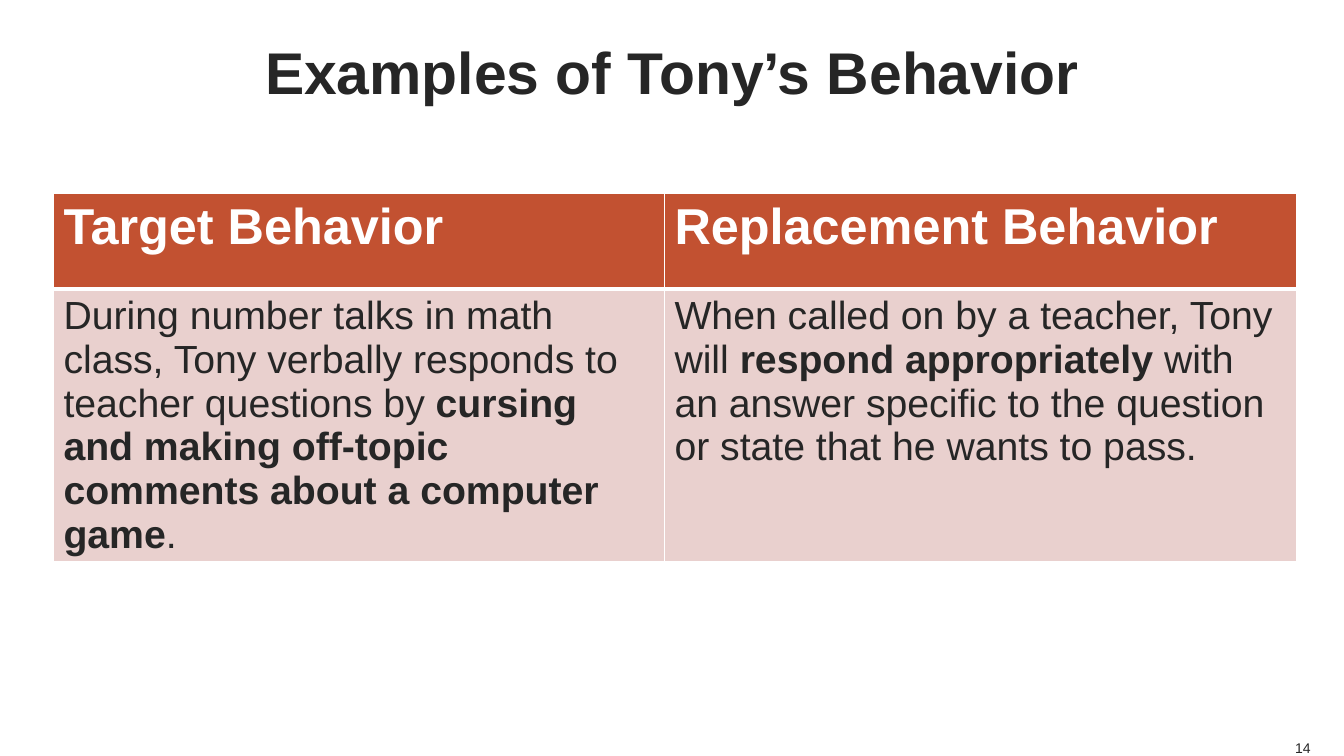
import lxml.etree
import pptx
import pptx.dml.color
import pptx.enum.text
import pptx.oxml.ns
import pptx.util

PX = 9144  # one hundredth of an inch
FONT = "Arial"
INK, WHITE, RUST, BLUSH = "262626", "FFFFFF", "C25131", "E9D0CE"

TITLE_FORMAT = {"name": FONT, "size": pptx.util.Pt(42), "bold": True}
HEADER_FORMAT = {"name": FONT, "size": pptx.util.Pt(36), "bold": True}
BODY_FORMAT = {"name": FONT, "size": pptx.util.Pt(28), "bold": False}
NUMBER_FORMAT = {"name": FONT, "size": pptx.util.Pt(10), "bold": False}

COLUMN_WIDTHS = [606, 627]
ROW_HEIGHTS = [95, 199]
# Each cell is a list of (text, bold) pieces
BEHAVIORS = [
    [
        [("Target Behavior", True)],
        [("Replacement Behavior", True)],
    ],
    [
        [
            ("During number talks in math class, Tony verbally responds to "
             "teacher questions by ", False),
            ("cursing and making off-topic comments about a computer game", True),
            (".", False),
        ],
        [
            ("When called on by a teacher, Tony will ", False),
            ("respond appropriately ", True),
            ("with an answer specific to the question or state that he "
             "wants to pass.", False),
        ],
    ],
]


def px(length):
    return pptx.util.Emu(length * PX)


def color(hex_value):
    return pptx.dml.color.RGBColor.from_string(hex_value)


def set_format(target, values):
    for name, value in values.items():
        setattr(target, name, value)


def place(shape, box):
    set_format(shape, dict(zip(("left", "top", "width", "height"), map(px, box))))


def add_text(paragraph, text, font_format, hex_value):
    run = paragraph.add_run()
    run.text = text
    set_format(run.font, font_format)
    run.font.color.rgb = color(hex_value)


def format_frame(frame, anchor, wrap):
    set_format(frame, {
        "margin_left": 0, "margin_top": 0, "margin_right": 0, "margin_bottom": 0,
        "vertical_anchor": anchor, "word_wrap": wrap,
        "auto_size": pptx.enum.text.MSO_AUTO_SIZE.NONE,
    })


def set_borders(cell, bottom_points):
    properties = cell._tc.get_or_add_tcPr()
    widths = {"lnL": 1, "lnR": 1, "lnT": 1, "lnB": bottom_points}
    for position, (side, points) in enumerate(widths.items()):
        line = lxml.etree.Element(pptx.oxml.ns.qn("a:" + side), w=str(pptx.util.Pt(points)))
        fill = lxml.etree.SubElement(line, pptx.oxml.ns.qn("a:solidFill"))
        lxml.etree.SubElement(fill, pptx.oxml.ns.qn("a:srgbClr"), val=WHITE)
        properties.insert(position, line)


def add_title(slide, box):
    title = slide.shapes.title
    place(title, box)
    format_frame(title.text_frame, pptx.enum.text.MSO_ANCHOR.MIDDLE, True)
    paragraph = title.text_frame.paragraphs[0]
    paragraph.alignment = pptx.enum.text.PP_ALIGN.CENTER
    add_text(paragraph, "Examples of Tony’s Behavior", TITLE_FORMAT, INK)


def add_slide_number(slide, box):
    number = slide.shapes.add_textbox(*map(px, box))
    format_frame(number.text_frame, pptx.enum.text.MSO_ANCHOR.BOTTOM, False)
    paragraph = number.text_frame.paragraphs[0]
    paragraph.alignment = pptx.enum.text.PP_ALIGN.RIGHT
    paragraph.space_after = pptx.util.Pt(6)
    add_text(paragraph, "14", NUMBER_FORMAT, INK)


def add_behavior_table(slide, box):
    shape = slide.shapes.add_table(len(ROW_HEIGHTS), len(COLUMN_WIDTHS), *map(px, box))
    table = shape.table
    for column, width in zip(table.columns, COLUMN_WIDTHS):
        column.width = px(width)
    for row, height in zip(table.rows, ROW_HEIGHTS):
        row.height = px(height)
    place(shape, box)

    # Header row first, then the examples
    styles = [(HEADER_FORMAT, WHITE, RUST, 3), (BODY_FORMAT, INK, BLUSH, 1)]
    for row, contents, style in zip(table.rows, BEHAVIORS, styles):
        font_format, text_color, fill_color, bottom_points = style
        for cell, pieces in zip(row.cells, contents):
            cell.fill.solid()
            cell.fill.fore_color.rgb = color(fill_color)
            set_borders(cell, bottom_points)
            set_format(cell, {"margin_left": px(10), "margin_right": px(10),
                              "margin_top": px(5), "margin_bottom": px(5)})
            for text, bold in pieces:
                add_text(cell.text_frame.paragraphs[0], text,
                         {**font_format, "bold": bold}, text_color)


def main():
    presentation = pptx.Presentation()
    presentation.slide_width = px(1333)
    presentation.slide_height = px(750)
    slide = presentation.slides.add_slide(presentation.slide_layouts.get_by_name("Title Only"))
    slide.background.fill.solid()
    slide.background.fill.fore_color.rgb = color(WHITE)
    add_title(slide, (50, 0, 1233, 140))
    add_slide_number(slide, (1283, 733, 17, 17))
    add_behavior_table(slide, (53, 192, 1233, 385))
    presentation.save("out.pptx")


if __name__ == "__main__":
    main()
